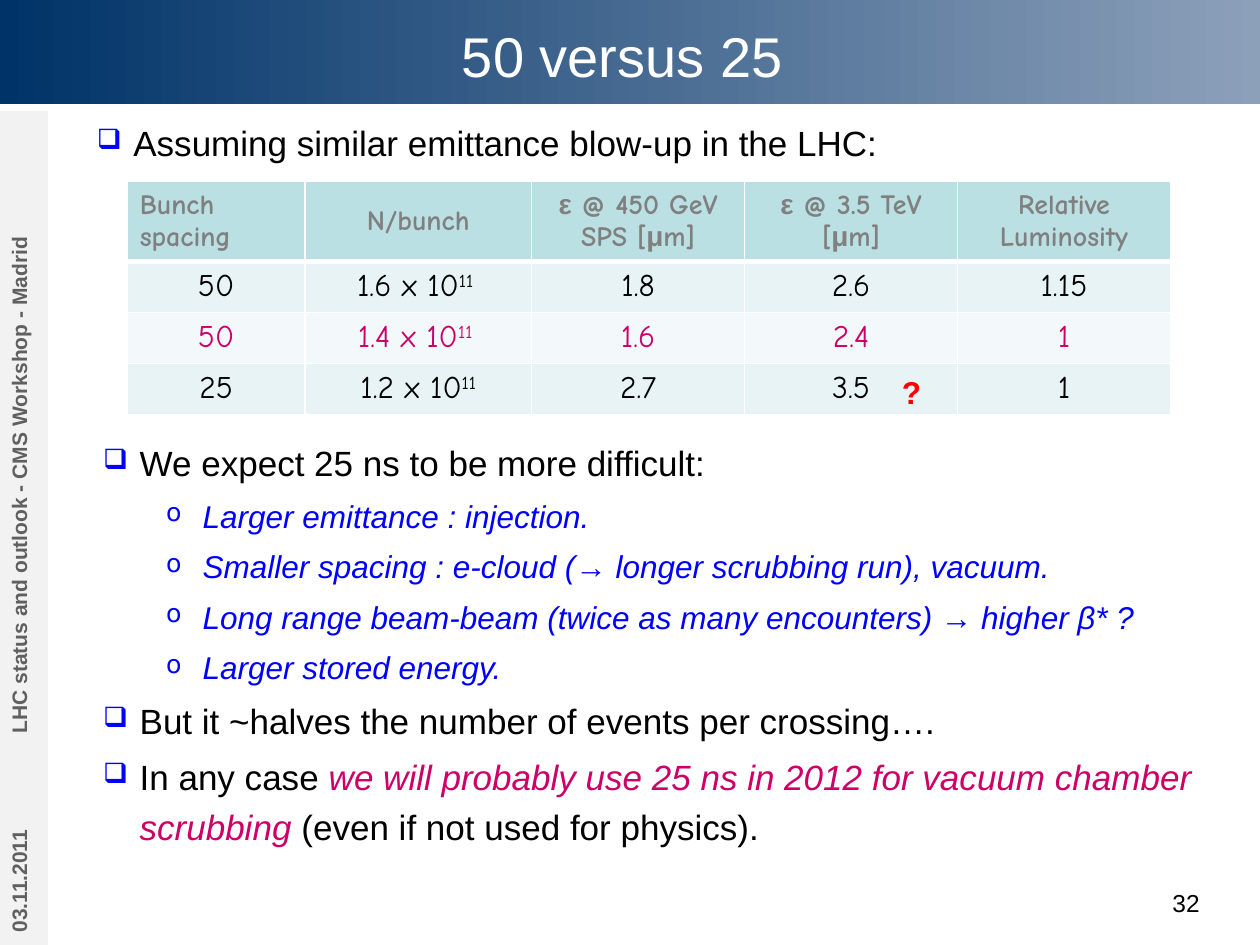
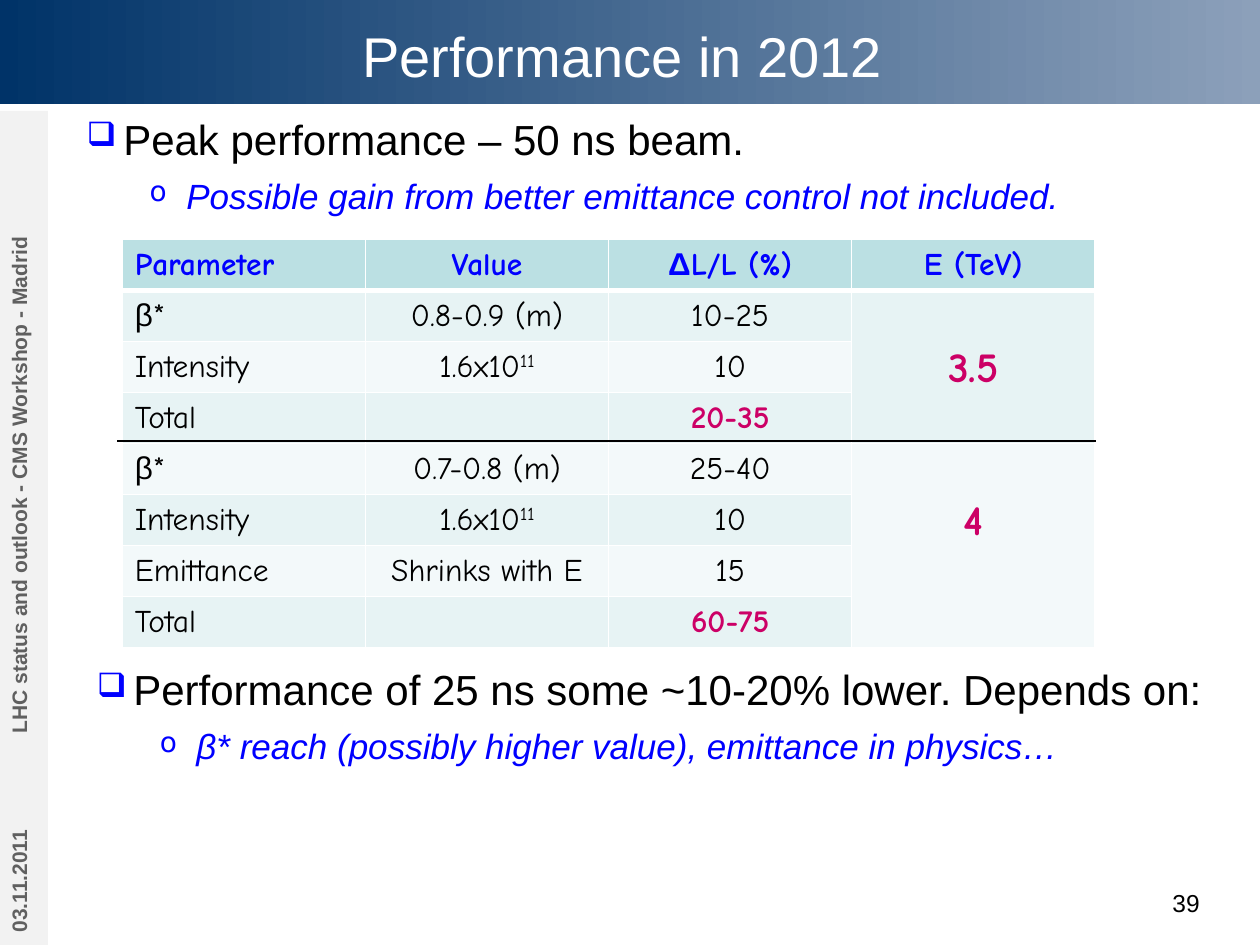
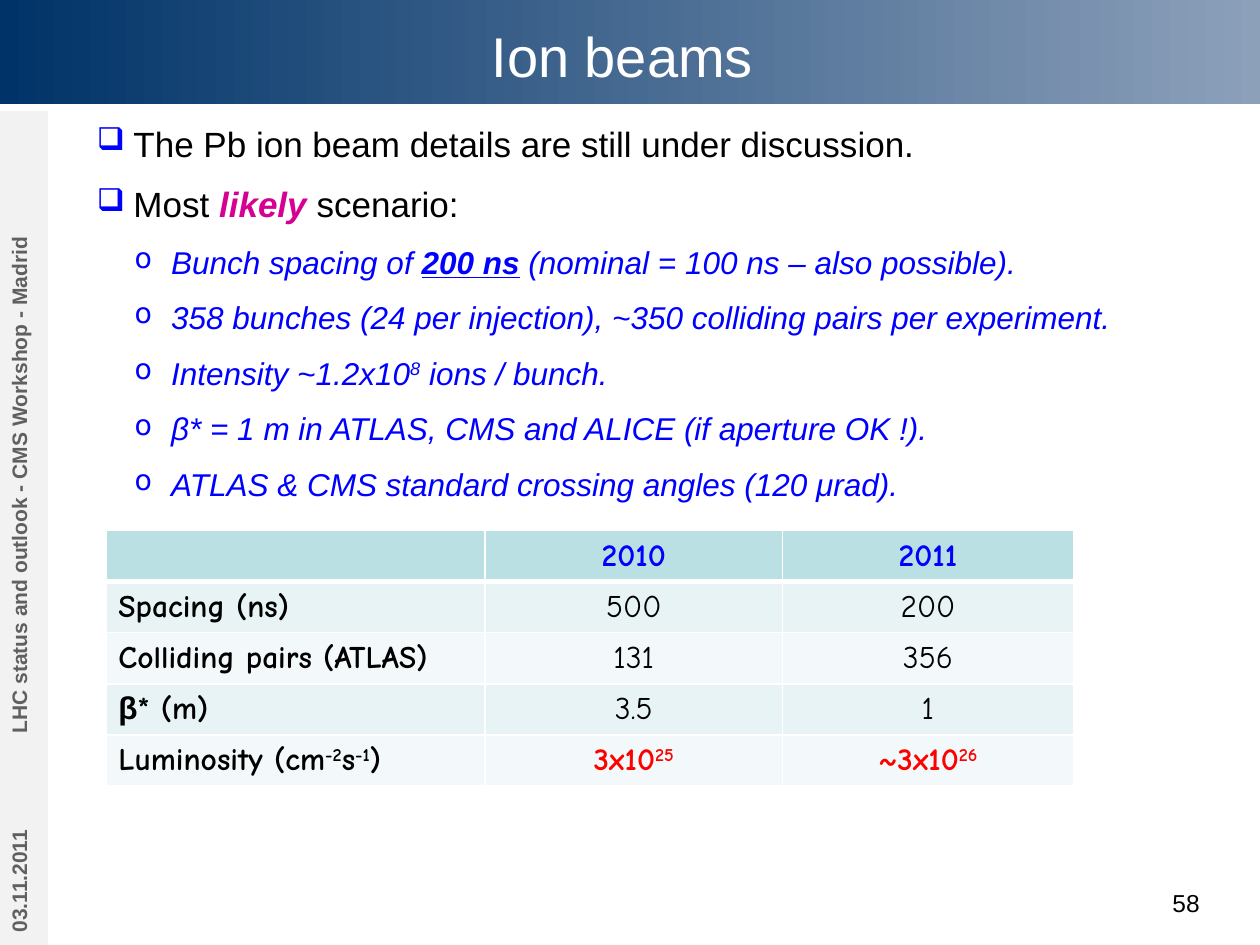
from itertools import groupby

from lxml import etree
from pptx import Presentation
from pptx import util as u
from pptx.dml.color import RGBColor
from pptx.enum import shapes, text
from pptx.oxml import ns

rgb = RGBColor.from_string
BLUE, PINK, RED, BLACK, WHITE = "0000FF", "CC0066", "FF0000", "000000", "FFFFFF"
HEADER_FILL, ROW_FILLS = "BBE0E3", ("F3F9FA", "E7F3F4")
BODY_FONT, TABLE_FONT = "Arial", "Comic Neue"
LEFT, CENTER, RIGHT = text.PP_ALIGN.LEFT, text.PP_ALIGN.CENTER, text.PP_ALIGN.RIGHT
TOP, MIDDLE = text.MSO_ANCHOR.TOP, text.MSO_ANCHOR.MIDDLE


def write(p, content, **base):
    """Add runs; content is a string or (string, format) pairs, ^...^ is superscript."""
    pairs = [(content, {})] if isinstance(content, str) else content
    for string, extra in pairs:
        fmt = {"name": BODY_FONT, "size": 18, "color": BLACK, "bold": False, **base, **extra}
        for i, part in enumerate(string.split("^")):
            for greek, chars in groupby(part, lambda ch: fmt["name"] != BODY_FONT and "Ͱ" <= ch <= "Ͽ"):
                r = p.add_run()
                r.text = "".join(chars)
                for key, value in fmt.items():
                    if key == "color":
                        r.font.color.rgb = rgb(value)
                    else:
                        setattr(r.font, key, u.Pt(value) if key == "size" else value)
                if greek:
                    r.font.name = BODY_FONT
                if i % 2:
                    r._r.get_or_add_rPr().set("baseline", "30000")


def add_xml(parent, tag, index=None, **attrs):
    """Add a drawing element with attributes and return it."""
    el = etree.Element(ns.qn(tag), attrs)
    parent.insert(len(parent) if index is None else index, el)
    return el


# Bullet styles: indents and sizes are (level 0, level 1)
loose = {"indents": (0.29, 0.79), "sizes": (20, 18), "before": (3, 3), "after": 0, "spacing": 1.2, "bullet": 80}
large = {**loose, "sizes": (24, 20), "before": (12, 6), "spacing": 1.0}
dense = {**loose, "indents": (0.29, 0.59), "before": (6, 6), "after": 2, "spacing": 1.1, "bullet": 90}

# Slide contents; table formats are (rows, columns, format)
pages = [
    {
        "title": "50 versus 25", "number": "32",
        "boxes": [
            ((0.67, 0.85, 9.03, 0.5), loose, [(0, "Assuming similar emittance blow-up in the LHC:")]),
            ((0.72, 3.39, 9.03, 3.42), loose, [
                (0, "We expect 25 ns to be more difficult:"),
                (1, "Larger emittance : injection."),
                (1, "Smaller spacing : e-cloud (→ longer scrubbing run), vacuum."),
                (1, "Long range beam-beam (twice as many encounters) → higher β* ?"),
                (1, "Larger stored energy."),
                (0, "But it ~halves the number of events per crossing…."),
                (0, [("In any case ", {}),
                     ("we will probably use 25 ns in 2012 for vacuum chamber scrubbing",
                      {"color": PINK, "italic": True}),
                     (" (even if not used for physics).", {})]),
            ]),
        ],
        "at": (1.01, 1.44, 8.27, 1.62), "cols": (1.41, 1.8, 1.69, 1.69, 1.69),
        "header": {"size": 16, "color": "808080"}, "left_rows": (0,),
        "cells": [
            ["Bunch spacing", "N/bunch", "ε @ 450 GeV\nSPS [μm]", "ε @ 3.5 TeV\n[μm]", "Relative Luminosity"],
            ["50", "1.6 x 10^11 ^", "1.8", "2.6", "1.15"],
            ["50", "1.4 x 10^11 ^", "1.6", "2.4", "1"],
            ["25", "1.2 x 10^11^", "2.7", "3.5", "1"],
        ],
        "formats": [((2,), range(5), {"color": PINK})],
    },
    {
        "title": "Performance in 2012", "number": "39",
        "boxes": [
            ((0.59, 0.85, 8.9, 0.93), large, [
                (0, "Peak performance – 50 ns beam."),
                (1, "Possible gain from better emittance control not included."),
            ]),
            ((0.67, 5.22, 9.28, 0.93), large, [
                (0, "Performance of 25 ns some ~10-20% lower. Depends on:"),
                (1, "β* reach (possibly higher value), emittance in physics…"),
            ]),
        ],
        "at": (0.97, 1.9, 7.73, 3.24), "cols": (1.93,) * 4,
        "header": {"color": BLUE}, "left_rows": range(8),
        "cells": [
            ["Parameter", "Value", "ΔL/L (%)", "E (TeV)"],
            ["β*", "0.8-0.9 (m)", "10-25", "3.5"],
            ["Intensity", "1.6x10^11^", "10", ""],
            ["Total", "", "20-35", ""],
            ["β*", "0.7-0.8 (m)", "25-40", "4"],
            ["Intensity", "1.6x10^11^", "10", ""],
            ["Emittance", "Shrinks with E", "15", ""],
            ["Total", "", "60-75", ""],
        ],
        "formats": [((3, 7), (2,), {"color": PINK, "bold": True}),
                    ((1, 4), (3,), {"color": PINK, "bold": True, "size": 24})],
    },
    {
        "title": "Ion beams", "number": "58",
        "boxes": [
            ((0.67, 0.89, 9.11, 3.15), dense, [
                (0, "The Pb ion beam details are still under discussion."),
                (0, [("Most ", {}), ("likely", {"color": "D60093", "bold": True, "italic": True}),
                     (" scenario:", {})]),
                (1, [("Bunch spacing of ", {}), ("200 ns", {"bold": True, "underline": True}),
                     (" (nominal = 100 ns – also possible).", {})]),
                (1, "358 bunches (24 per injection), ~350 colliding pairs per experiment."),
                (1, "Intensity ~1.2x10^8^ ions / bunch."),
                (1, "β* = 1 m in ATLAS, CMS and ALICE (if aperture OK !)."),
                (1, "ATLAS & CMS standard crossing angles (120 μrad)."),
            ]),
        ],
        "at": (0.84, 4.21, 7.69, 2.03), "cols": (3.01, 2.36, 2.31),
        "header": {"color": BLUE}, "left_rows": range(5),
        "cells": [
            ["", "2010", "2011"],
            ["Spacing (ns)", "500", "200"],
            ["Colliding pairs (ATLAS)", "131", "356"],
            ["β* (m)", "3.5", "1"],
            ["Luminosity (cm^-2^s^-1^)", "3x10^25^", "~3x10^26^"],
        ],
        "formats": [(range(1, 5), (0,), {"bold": True}), ((4,), (1, 2), {"bold": True, "color": RED})],
    },
]
side_labels = [
    ((-0.6, 6.52, 1.58, 0.38), "03.11.2011"),
    ((-2.33, 3.21, 5.04, 0.38), "LHC status and outlook - CMS Workshop - Madrid"),
]

prs = Presentation()
prs.slide_width, prs.slide_height = u.Inches(10), u.Inches(7.5)
slides, tables = [], []

for page in pages:
    s = prs.slides.add_slide(prs.slide_layouts[6])
    slides.append(s)

    # Title band
    sp = s.shapes.add_shape(shapes.MSO_SHAPE.RECTANGLE, 0, 0, prs.slide_width, u.Inches(0.83))
    sp.shadow.inherit = False
    sp.line.fill.background()
    sp.fill.gradient()
    sp.fill.gradient_angle = 0
    for stop, color in zip(sp.fill.gradient_stops, ("003368", "8CA0BA")):
        stop.color.rgb = rgb(color)

    # Title and slide number
    for at, string, align, anchor, fmt in [
        ((0.88, 0, 8.12, 0.88), page["title"], CENTER, MIDDLE, {"size": 32, "color": WHITE}),
        ((8.62, 7, 1, 0.35), page["number"], RIGHT, TOP, {"size": 14}),
    ]:
        tf = s.shapes.add_textbox(*map(u.Inches, at)).text_frame
        tf.word_wrap, tf.vertical_anchor = True, anchor
        tf.paragraphs[0].alignment = align
        write(tf.paragraphs[0], string, **fmt)

    # Vertical side labels
    for at, string in side_labels:
        sp = s.shapes.add_shape(shapes.MSO_SHAPE.RECTANGLE, *map(u.Inches, at))
        sp.shadow.inherit = False
        sp.rotation = 270
        sp.line.fill.background()
        sp.fill.solid()
        sp.fill.fore_color.rgb = rgb("F2F2F2")
        tf = sp.text_frame
        tf.vertical_anchor = TOP
        tf.paragraphs[0].alignment = LEFT
        write(tf.paragraphs[0], string, size=12, color="606060", bold=True)

    # Bulleted text
    for at, style, lines in page["boxes"]:
        tf = s.shapes.add_textbox(*map(u.Inches, at)).text_frame
        tf.word_wrap = True
        for i, (level, content) in enumerate(lines):
            p = tf.add_paragraph() if i else tf.paragraphs[0]
            pPr = p._p.get_or_add_pPr()
            pPr.set("marL", str(u.Inches(style["indents"][level])))
            pPr.set("indent", str(u.Inches(-0.29)))
            add_xml(add_xml(pPr, "a:buClr"), "a:srgbClr", val=BLUE)
            add_xml(pPr, "a:buSzPct", val=str(style["bullet"] * 1000))
            add_xml(pPr, "a:buChar", char="❑o"[level])
            p.level, p.line_spacing = level, style["spacing"]
            p.space_before = u.Pt(style["before"][level] if i else 0)
            p.space_after = u.Pt(style["after"])
            fmt = {"color": BLUE, "italic": True} if level else {}
            write(p, content, size=style["sizes"][level], **fmt)

    # Table
    rows = page["cells"]
    tbl = s.shapes.add_table(len(rows), len(rows[0]), *map(u.Inches, page["at"])).table
    tables.append(tbl)
    for col, width in zip(tbl.columns, page["cols"]):
        col.width = u.Inches(width)
    for r, row in enumerate(rows):
        for c, content in enumerate(row):
            cell = tbl.cell(r, c)
            cell.vertical_anchor = MIDDLE
            cell.fill.solid()
            cell.fill.fore_color.rgb = rgb(ROW_FILLS[r % 2] if r else HEADER_FILL)
            fmt = {"name": TABLE_FONT, **({} if r else {"bold": True, **page["header"]})}
            for in_rows, in_cols, extra in page["formats"]:
                if r in in_rows and c in in_cols:
                    fmt.update(extra)
            for i, string in enumerate(content.split("\n")):
                p = cell.text_frame.add_paragraph() if i else cell.text_frame.paragraphs[0]
                p.alignment = LEFT if c == 0 and r in page["left_rows"] else CENTER
                if string:
                    write(p, string, **fmt)
            # White borders, thick under the header
            for i, side in enumerate("LRTB"):
                thick = (r, side) in ((0, "B"), (1, "T"))
                ln = add_xml(cell._tc.get_or_add_tcPr(), "a:ln" + side, i, w=str(u.Pt(3 if thick else 1)))
                add_xml(add_xml(ln, "a:solidFill"), "a:srgbClr", val=WHITE)

# 50 versus 25: two-line header and question mark
tables[0].rows[0].height = u.Inches(0.6)
tf = slides[0].shapes.add_textbox(*map(u.Inches, (7.06, 2.91, 0.36, 0.4))).text_frame
tf.word_wrap = False
write(tf.paragraphs[0], "?", color=RED, bold=True)

# Performance in 2012: merged energy cells and the line between energies
for first, last in ((1, 3), (4, 7)):
    cell = tables[1].cell(first, 3)
    cell.merge(tables[1].cell(last, 3))
    cell.vertical_anchor = TOP
    cell.margin_top = u.Inches(0.43)
ln = slides[1].shapes.add_connector(shapes.MSO_CONNECTOR.STRAIGHT, *map(u.Inches, (0.93, 3.5, 8.7, 3.5)))
ln.line.color.rgb = rgb(BLACK)
ln.line.width = u.Pt(0.75)
add_xml(ln._element.spPr, "a:effectLst")

prs.save("out.pptx")
